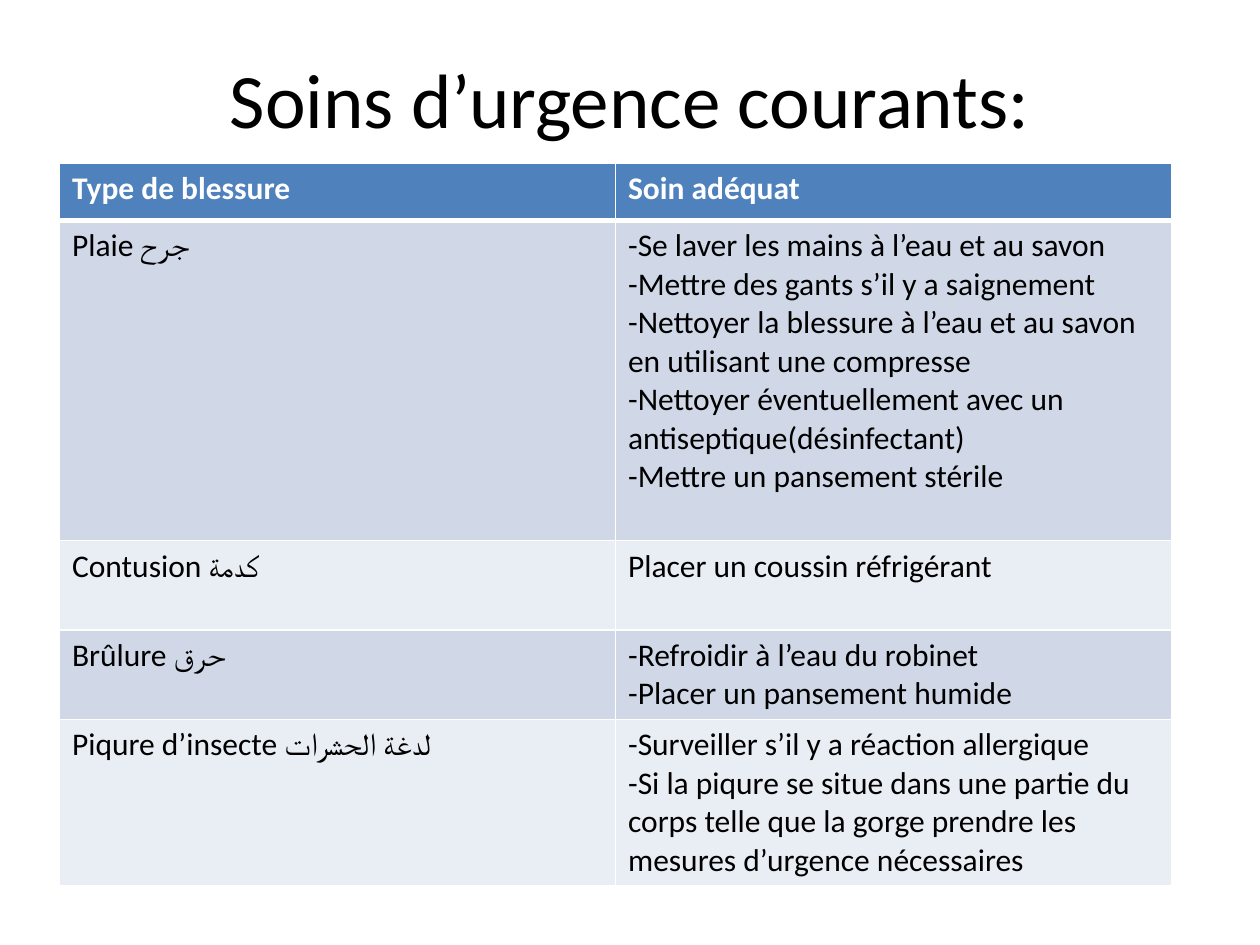
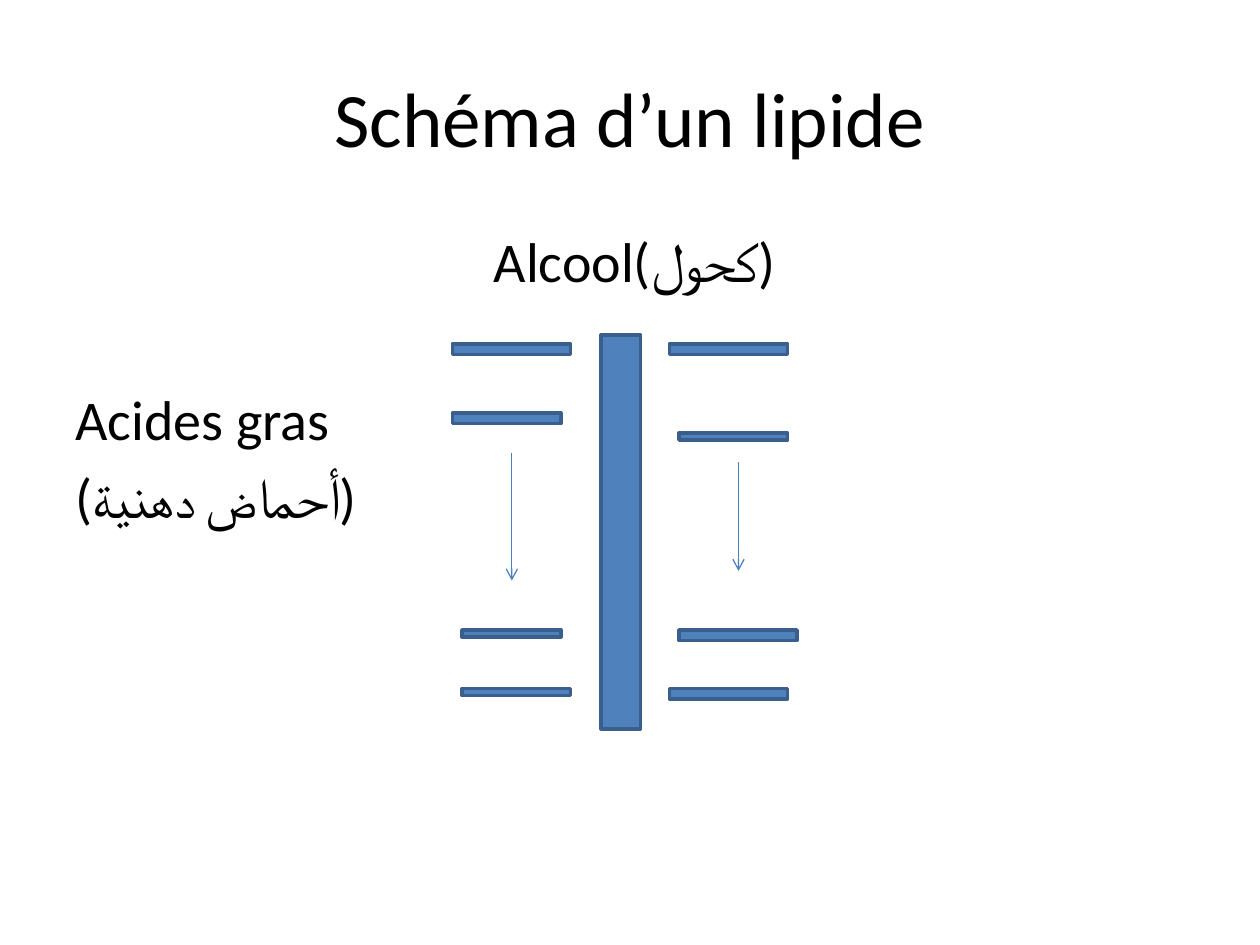
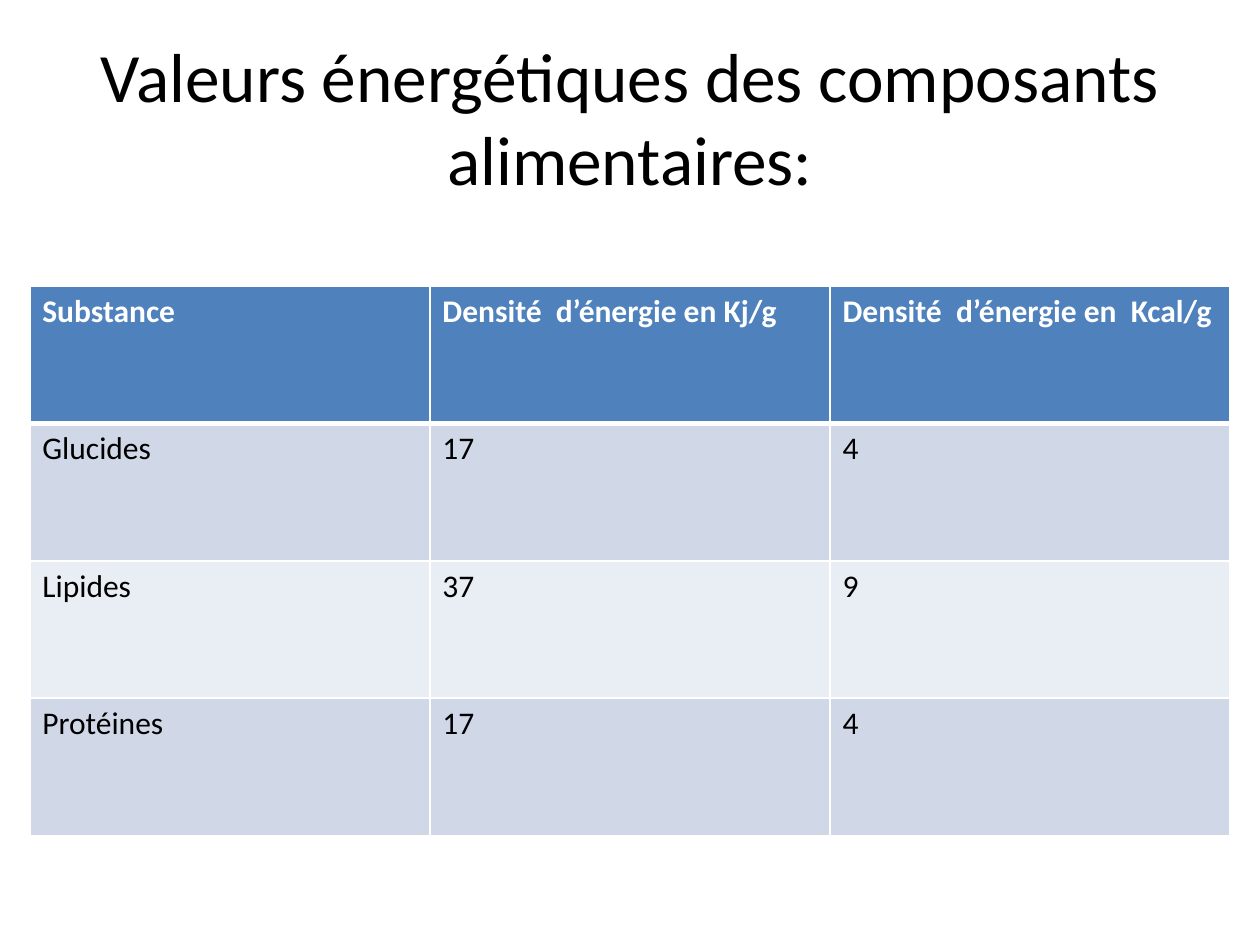
import pptx
import pptx.util
import pptx.dml.color
import pptx.enum.shapes
import pptx.enum.text
import pptx.oxml

Pt = pptx.util.Pt
FONT = "Calibri"
NS = pptx.oxml.ns.nsdecls("a")
COLORS = {
    "text": "000000",
    "header_text": "FFFFFF",
    "border": "FFFFFF",
    "accent": "4F81BD",
    "outline": "3A5F8C",
    "arrow": "4B7EBC",
    "band_dark": "D0D8E8",
    "band_light": "E9EDF4",
}

CARE_ROWS = [
    ["Type de blessure", "Soin adéquat"],
    ["Plaie جرح",
     "-Se laver les mains à l’eau et au savon\n"
     "-Mettre des gants s’il y a saignement\n"
     "-Nettoyer la blessure à l’eau et au savon en utilisant une compresse\n"
     "-Nettoyer éventuellement avec un antiseptique(désinfectant)\n"
     "-Mettre un pansement stérile"],
    ["Contusion كدمة", "Placer un coussin réfrigérant"],
    ["Brûlure حرق", "-Refroidir à l’eau du robinet\n-Placer un pansement humide"],
    ["Piqure d’insecte لدغة الحشرات",
     "-Surveiller s’il y a réaction allergique\n"
     "-Si la piqure se situe dans une partie du corps telle que la gorge "
     "prendre les mesures d’urgence nécessaires"],
]
ENERGY_ROWS = [
    ["Substance", "Densité  d’énergie en Kj/g", "Densité  d’énergie en  Kcal/g"],
    ["Glucides", "17", "4"],
    ["Lipides", "37", "9"],
    ["Protéines", "17", "4"],
]

ALCOHOL_BAR = (343.5, 191.5, 22.5, 225)
FATTY_ACID_BARS = [
    (258.5, 196.5, 67.5, 6),
    (382.5, 196.5, 67.5, 6),
    (258.5, 236, 62, 6),
    (388, 247.5, 62, 4),
    (264, 360, 56.5, 4),
    (388, 360, 67.5, 6),
    (264, 393.5, 62, 4),
    (382.5, 393.5, 67.5, 6),
]
ARROWS = [(292.5, 258.75, 331.75), (422, 264.25, 326.25)]


def rgb(name):
    return pptx.dml.color.RGBColor.from_string(COLORS[name])


def write(tf, text, size, color="text", bold=False, align=None, space=0):
    for i, line in enumerate(text.split("\n")):
        p = tf.paragraphs[0] if i == 0 else tf.add_paragraph()
        p.alignment = align
        if i:
            p.space_before = Pt(space)
        r = p.add_run()
        r.text = line
        r.font.size = Pt(size)
        r.font.bold = bold
        r.font.color.rgb = rgb(color)
        r.font.name = FONT
        r._r.get_or_add_rPr().append(
            pptx.oxml.parse_xml(f'<a:cs {NS} typeface="{FONT}"/>'))


def add_titled_slide(prs, title, size=44, height=90):
    s = prs.slides.add_slide(prs.slide_layouts[5])
    sp = s.shapes.title
    sp.left, sp.top, sp.width, sp.height = Pt(36), Pt(21.6), Pt(648), Pt(height)
    tf = sp.text_frame
    tf.auto_size = pptx.enum.text.MSO_AUTO_SIZE.NONE
    tf.vertical_anchor = pptx.enum.text.MSO_ANCHOR.MIDDLE
    write(tf, title, size, align=pptx.enum.text.PP_ALIGN.CENTER)
    return s


def add_border(cell, side, width):
    cell._tc.get_or_add_tcPr().insert(0, pptx.oxml.parse_xml(
        f'<a:{side} {NS} w="{Pt(width)}"><a:solidFill>'
        f'<a:srgbClr val="{COLORS["border"]}"/></a:solidFill></a:{side}>'))


def add_banded_table(s, rows, left, top, width, heights):
    cols = len(rows[0])
    frame = s.shapes.add_table(len(rows), cols, Pt(left), Pt(top), Pt(width), Pt(sum(heights)))
    table = frame.table
    for col in table.columns:
        col.width = Pt(width / cols)
    for i, (row, height) in enumerate(zip(rows, heights)):
        table.rows[i].height = Pt(height)
        header = i == 0
        fill = "accent" if header else "band_dark" if i % 2 else "band_light"
        for j, text in enumerate(row):
            cell = table.cell(i, j)
            cell.fill.solid()
            cell.fill.fore_color.rgb = rgb(fill)
            add_border(cell, "lnB", 3 if header else 1)
            if i == 1:
                add_border(cell, "lnT", 3)
            write(cell.text_frame, text, 18, "header_text" if header else "text", header)


def add_label(s, text, left, top, width, height):
    tf = s.shapes.add_textbox(Pt(left), Pt(top), Pt(width), Pt(height)).text_frame
    tf.word_wrap = True
    write(tf, text, 32, space=6.4)


def add_bar(s, left, top, width, height):
    sp = s.shapes.add_shape(pptx.enum.shapes.MSO_SHAPE.RECTANGLE,
                            Pt(left), Pt(top), Pt(width), Pt(height))
    sp.shadow.inherit = False
    sp.fill.solid()
    sp.fill.fore_color.rgb = rgb("accent")
    sp.line.color.rgb = rgb("outline")
    sp.line.width = Pt(2)


def add_down_arrow(s, x, top, bottom):
    line = s.shapes.add_connector(pptx.enum.shapes.MSO_CONNECTOR.STRAIGHT,
                                  Pt(x), Pt(top), Pt(x), Pt(bottom))
    line.line.color.rgb = rgb("arrow")
    line.line.width = Pt(0.75)
    line.line._get_or_add_ln().append(
        pptx.oxml.parse_xml(f'<a:tailEnd {NS} type="arrow"/>'))
    line._element.spPr.append(pptx.oxml.parse_xml(f"<a:effectLst {NS}/>"))


def main():
    prs = pptx.Presentation()
    prs.slide_width, prs.slide_height = Pt(720), Pt(540)

    s = add_titled_slide(prs, "Soins d’urgence courants:", height=68.4)
    add_banded_table(s, CARE_ROWS, 34, 93, 635.5, [33, 183, 51, 51, 95])

    s = add_titled_slide(prs, "Schéma d’un lipide")
    add_label(s, "Alcool(كحول)", 275, 126, 220, 46)
    add_label(s, "Acides gras\n(أحماض دهنية)", 36, 216, 215, 92)
    for bar in [ALCOHOL_BAR] + FATTY_ACID_BARS:
        add_bar(s, *bar)
    for arrow in ARROWS:
        add_down_arrow(s, *arrow)

    s = add_titled_slide(prs, "Valeurs énergétiques des composants alimentaires:", 39.6)
    add_banded_table(s, ENERGY_ROWS, 17, 163.5, 686, [78.5] * len(ENERGY_ROWS))

    prs.save("out.pptx")


if __name__ == "__main__":
    main()
